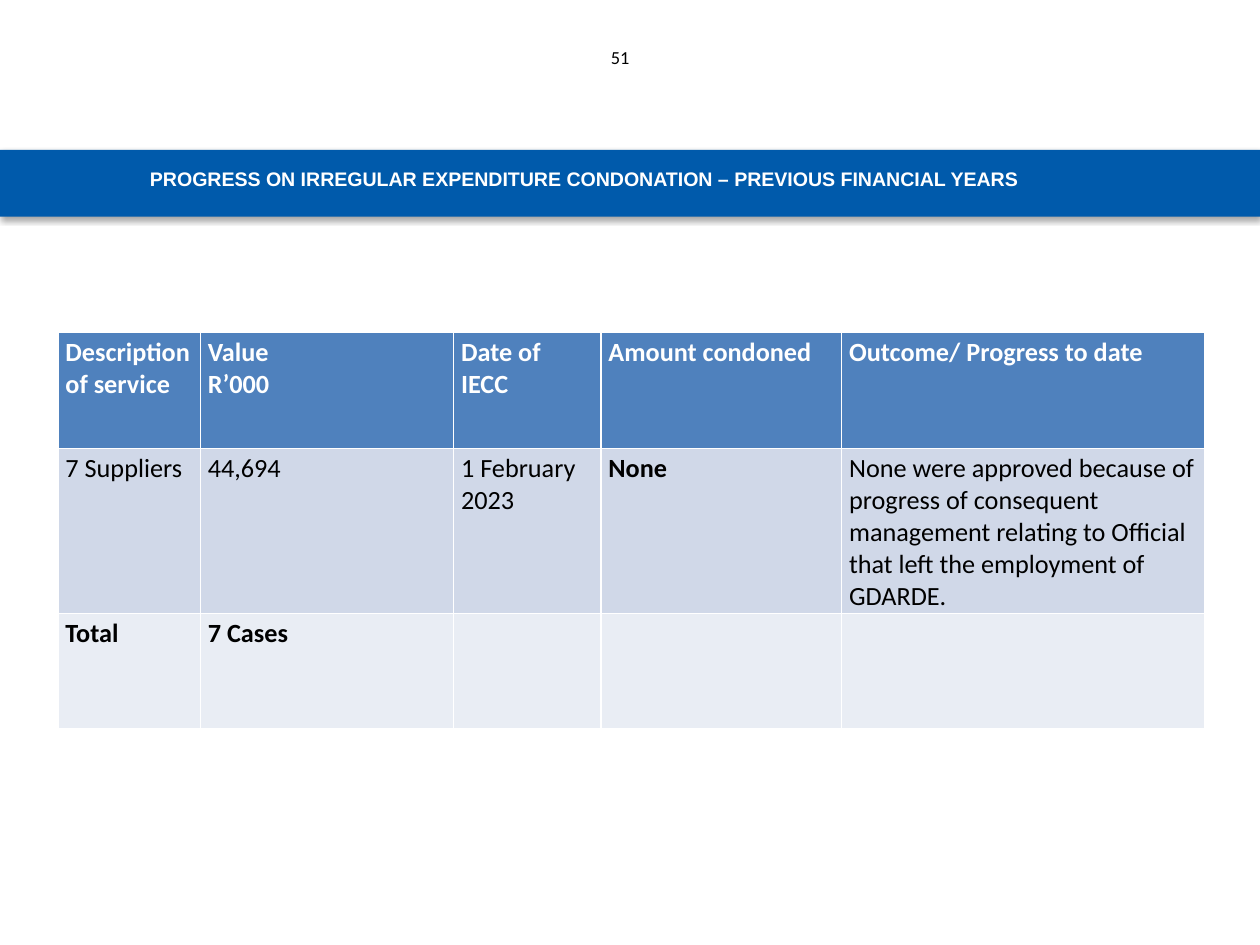
from lxml import etree
from pptx import Presentation
from pptx.dml.color import RGBColor
from pptx.enum import shapes, text
from pptx.util import Inches, Pt

BLUE = RGBColor(0x00, 0x5A, 0xAB)
HEAD = RGBColor(0x4F, 0x81, 0xBD)
DARK = RGBColor(0xD0, 0xD8, 0xE8)
PALE = RGBColor(0xE9, 0xED, 0xF4)
WHITE = RGBColor(0xFF, 0xFF, 0xFF)
BLACK = RGBColor(0x00, 0x00, 0x00)

SHADOW = """<a:effectLst xmlns:a="http://schemas.openxmlformats.org/drawingml/2006/main">
<a:outerShdw blurRad="39370" dist="22860" dir="5400000" rotWithShape="0">
<a:srgbClr val="000000"><a:alpha val="35000"/></a:srgbClr>
</a:outerShdw></a:effectLst>"""


def write(para, words, size, color, bold=False, face="Calibri"):
    run = para.add_run()
    run.text = words
    font = run.font
    font.name, font.size, font.bold = face, Pt(size), bold
    font.color.rgb = color


deck = Presentation()
deck.slide_width, deck.slide_height = Inches(10), Inches(7.5)
slide = deck.slides.add_slide(deck.slide_layouts[5])

# Blue band, placed behind the title
band = slide.shapes.add_shape(shapes.MSO_SHAPE.RECTANGLE,
                              0, Inches(1.19), Inches(10), Inches(0.53))
band.fill.solid()
band.fill.fore_color.rgb = BLUE
band.line.fill.background()
band.element.spPr.append(etree.fromstring(SHADOW))
slide.shapes.element.insert(2, band.element)

title = slide.shapes.title
title.left, title.top = Inches(1.09), Inches(1.19)
title.width, title.height = Inches(8.68), Inches(0.45)
title.text_frame.vertical_anchor = text.MSO_ANCHOR.MIDDLE
para = title.text_frame.paragraphs[0]
para.alignment = text.PP_ALIGN.LEFT
write(para, "PROGRESS ON IRREGULAR EXPENDITURE CONDONATION – PREVIOUS FINANCIAL YEARS",
      11.2, WHITE, True, "Arial")

# Page number
page = slide.shapes.add_textbox(Inches(4.75), Inches(0.32), Inches(0.5), Inches(0.4))
page.text_frame.word_wrap = True
write(page.text_frame.paragraphs[0], "51", 10.5, BLACK)

# Condonation table: its default style gives the white rules
rows = [
    ["Description of service", "Value\nR’000", "Date of IECC",
     "Amount condoned", "Outcome/ Progress to date"],
    ["7 Suppliers", "44,694", "1 February 2023", "None",
     "None were approved because of progress of consequent management "
     "relating to Official that left the employment of GDARDE."],
    ["Total", "7 Cases", "", "", ""],
]
widths = [1.13, 2.01, 1.17, 1.91, 2.88]
heights = [0.92, 1.31, 0.91]
fills = [HEAD, DARK, PALE]

table = slide.shapes.add_table(len(rows), len(widths), Inches(0.46), Inches(2.64),
                               Inches(sum(widths)), Inches(sum(heights))).table
for col, width in zip(table.columns, widths):
    col.width = Inches(width)
for r, row in enumerate(rows):
    table.rows[r].height = Inches(heights[r])
    for c, words in enumerate(row):
        cell = table.cell(r, c)
        cell.fill.solid()
        cell.fill.fore_color.rgb = fills[r]
        cell.margin_left = cell.margin_right = Inches(0.06)
        cell.margin_top = cell.margin_bottom = Inches(0.03)
        if not words:
            continue
        bold = r != 1 or words == "None"
        frame = cell.text_frame
        for i, line in enumerate(words.split("\n")):
            para = frame.add_paragraph() if i else frame.paragraphs[0]
            write(para, line, 15, BLACK if r else WHITE, bold)

deck.save("out.pptx")
